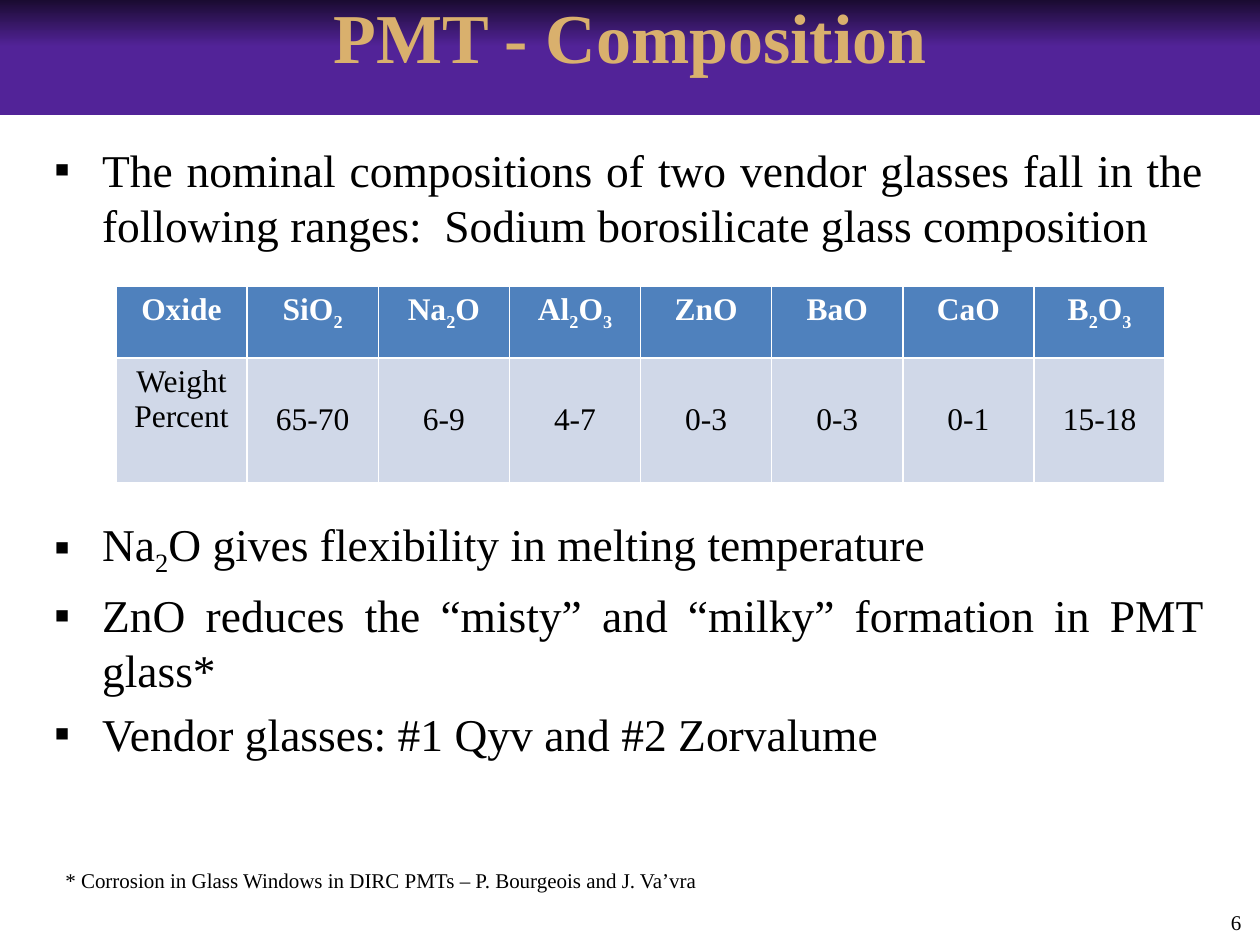
from dataclasses import dataclass

from lxml.etree import SubElement
from pptx import Presentation
from pptx.dml.color import RGBColor
from pptx.enum.text import MSO_ANCHOR, MSO_AUTO_SIZE, PP_ALIGN
from pptx.oxml.ns import qn
from pptx.util import Inches, Pt


@dataclass(frozen=True)
class Theme:
    font: str = "Times New Roman"
    black: RGBColor = RGBColor(0, 0, 0)
    white: RGBColor = RGBColor(255, 255, 255)
    purple: RGBColor = RGBColor(0x52, 0x23, 0x98)
    gold: RGBColor = RGBColor(0xD9, 0xB0, 0x6D)
    header: RGBColor = RGBColor(0x4F, 0x81, 0xBD)
    band: RGBColor = RGBColor(0xD0, 0xD8, 0xE8)
    title_size: Pt = Pt(40)
    body_size: Pt = Pt(26)
    table_size: Pt = Pt(18)
    note_size: Pt = Pt(12)


theme = Theme()


def add_text(para, text, size, color, bold=False):
    """Add text run by run; parts between underscores become subscripts."""
    for index, part in enumerate(text.split("_")):
        if not part:
            continue
        span = para.add_run()
        span.text = part
        span.font.name = theme.font
        span.font.size = size
        span.font.bold = bold
        span.font.color.rgb = color
        if index % 2:
            span.font._element.set("baseline", "-25000")


def place(shape, left, top, width, height):
    shape.left, shape.top = Inches(left), Inches(top)
    shape.width, shape.height = Inches(width), Inches(height)


deck = Presentation()
deck.slide_width, deck.slide_height = Inches(10), Inches(7.5)
page = deck.slides.add_slide(deck.slide_layouts[1])

# Title band
title = page.shapes.title
place(title, 0, -0.17, 10, 1.08)
title.fill.gradient()
title.fill.gradient_angle = 270
for stop, color, position in zip(
    title.fill.gradient_stops, (theme.black, theme.purple), (0, 0.5)
):
    stop.color.rgb = color
    stop.position = position
frame = title.text_frame
frame.auto_size = MSO_AUTO_SIZE.NONE
frame.vertical_anchor = MSO_ANCHOR.TOP
frame.margin_top = Inches(0.12)
frame.paragraphs[0].alignment = PP_ALIGN.CENTER
add_text(frame.paragraphs[0], "PMT - Composition", theme.title_size, theme.gold, True)

# Bullets: the second one leaves room for the table
bullets = [
    ("The nominal compositions of two vendor glasses fall in the following "
     "ranges:  Sodium borosilicate glass composition", 5.5),
    ("Na_2_O gives flexibility in melting temperature", 151),
    ("ZnO reduces the “misty” and “milky” formation in PMT glass*", 5.5),
    ("Vendor glasses: #1 Qyv and #2 Zorvalume", 5.5),
]
body = page.placeholders[1]
place(body, 0.33, 1.08, 9.33, 6.17)
frame = body.text_frame
frame.auto_size = MSO_AUTO_SIZE.NONE
for index, (text, gap) in enumerate(bullets):
    para = frame.add_paragraph() if index else frame.paragraphs[0]
    para.alignment = PP_ALIGN.JUSTIFY
    para.space_before = Pt(gap)
    properties = para._p.get_or_add_pPr()
    properties.set("marL", str(Inches(0.38)))
    properties.set("indent", str(-Inches(0.38)))
    SubElement(properties, qn("a:buFont"), typeface=theme.font)
    SubElement(properties, qn("a:buChar"), char="▪")
    add_text(para, text, theme.body_size, theme.black)

# Composition table
composition = [
    ("Oxide", "Weight Percent"),
    ("SiO_2_", "65-70"),
    ("Na_2_O", "6-9"),
    ("Al_2_O_3_", "4-7"),
    ("ZnO", "0-3"),
    ("BaO", "0-3"),
    ("CaO", "0-1"),
    ("B_2_O_3_", "15-18"),
]
table = page.shapes.add_table(
    2, len(composition), Inches(0.92), Inches(2.27), Inches(8.33), Inches(1.56)
).table
table.rows[0].height, table.rows[1].height = Inches(0.57), Inches(0.99)
row_styles = [(theme.header, theme.white, True), (theme.band, theme.black, False)]
for column, entries in enumerate(composition):
    for row, (text, (fill, color, bold)) in enumerate(zip(entries, row_styles)):
        cell = table.cell(row, column)
        cell.fill.solid()
        cell.fill.fore_color.rgb = fill
        if row and column:
            cell.vertical_anchor = MSO_ANCHOR.MIDDLE
        para = cell.text_frame.paragraphs[0]
        para.alignment = PP_ALIGN.CENTER
        add_text(para, text, theme.table_size, color, bold)

# Footnote and page number
notes = [
    ("* Corrosion in Glass Windows in DIRC PMTs – P. Bourgeois and J. Va’vra",
     0.42, 6.84, 8.08, True),
    ("6", 9.67, 7.17, 0.29, False),
]
for text, left, top, width, wraps in notes:
    box = page.shapes.add_textbox(Inches(left), Inches(top), Inches(width), Inches(0.3))
    box.text_frame.word_wrap = wraps
    add_text(box.text_frame.paragraphs[0], text, theme.note_size, theme.black)

deck.save("out.pptx")
